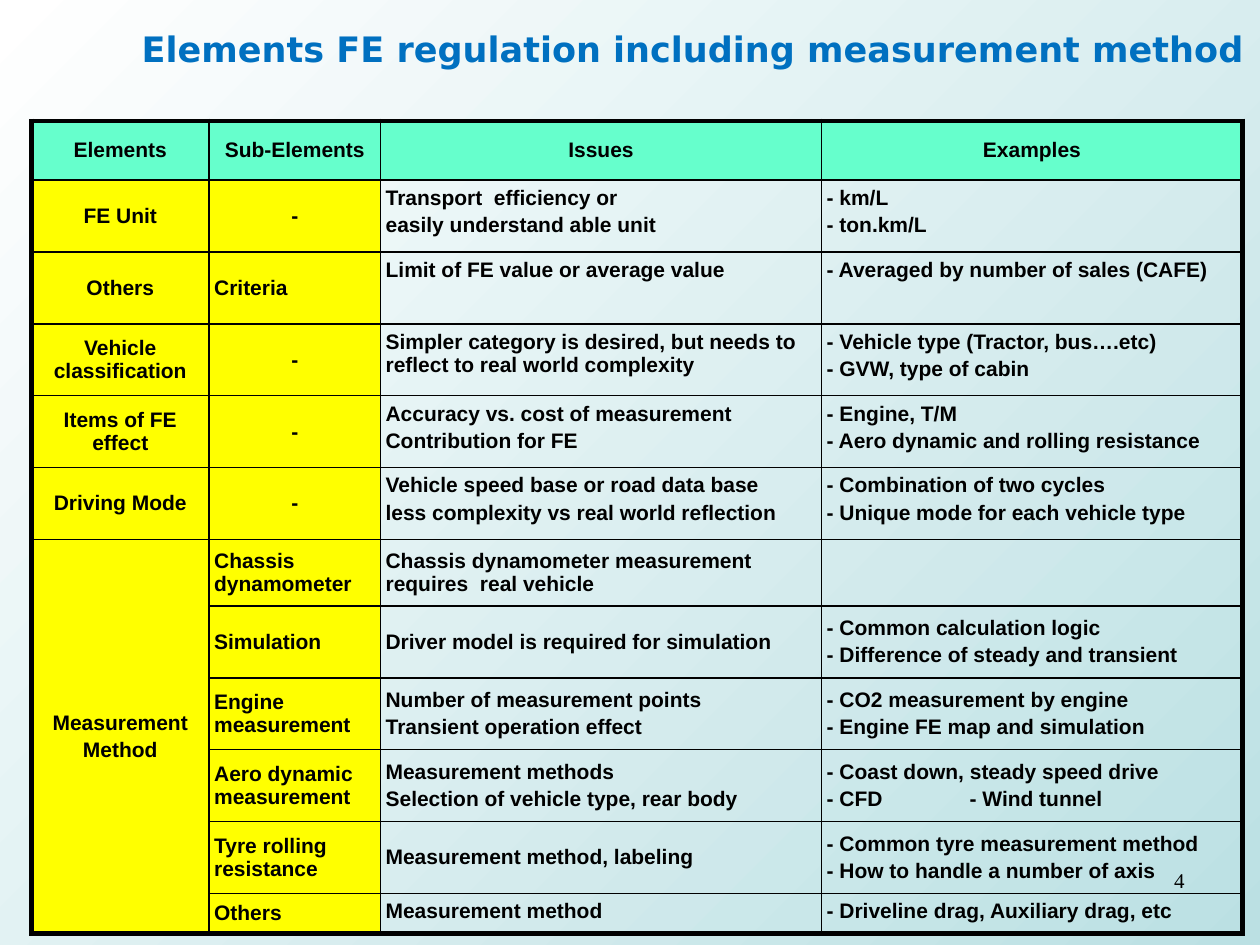
from dataclasses import dataclass

from lxml.etree import SubElement
from pptx import Presentation
from pptx.dml.color import RGBColor
from pptx.enum.text import MSO_ANCHOR, MSO_AUTO_SIZE, PP_ALIGN
from pptx.oxml.ns import qn
from pptx.table import Table, _Cell
from pptx.text.text import TextFrame
from pptx.util import Pt

BLACK = RGBColor(0x00, 0x00, 0x00)
WHITE = RGBColor(0xFF, 0xFF, 0xFF)
PALE_TEAL = RGBColor(0xBB, 0xE0, 0xE3)
TITLE_BLUE = RGBColor(0x00, 0x70, 0xC0)
MINT = RGBColor(0x66, 0xFF, 0xCC)
YELLOW = RGBColor(0xFF, 0xFF, 0x00)

THIN, THICK = 1, 3
COL_WIDTHS = (101.5, 98, 252, 240.5)


@dataclass
class Row:
    element: str
    sub: str
    issues: str
    examples: str
    height: float = 41.1
    anchor: MSO_ANCHOR = MSO_ANCHOR.TOP

    def texts(self) -> tuple[str, ...]:
        return self.element, self.sub, self.issues, self.examples


MIDDLE = MSO_ANCHOR.MIDDLE
ROWS = [
    Row("Elements", "Sub-Elements", "Issues", "Examples", 33.8, MIDDLE),
    Row("FE Unit", "-", "Transport  efficiency or\neasily understand able unit",
        "- km/L\n- ton.km/L"),
    Row("Others", "Criteria", "Limit of FE value or average value",
        "- Averaged by number of sales (CAFE)"),
    Row("Vehicle classification", "-",
        "Simpler category is desired, but needs to reflect to real world complexity",
        "- Vehicle type (Tractor, bus….etc)\n- GVW, type of cabin"),
    Row("Items of FE effect", "-",
        "Accuracy vs. cost of measurement\nContribution for FE",
        "- Engine, T/M\n- Aero dynamic and rolling resistance"),
    Row("Driving Mode", "-",
        "Vehicle speed base or road data base\nless complexity vs real world reflection",
        "- Combination of two cycles\n- Unique mode for each vehicle type"),
    Row("Measurement\nMethod", "Chassis dynamometer",
        "Chassis dynamometer measurement requires  real vehicle", "", 38, MIDDLE),
    Row("", "Simulation", "Driver model is required for simulation",
        "- Common calculation logic\n- Difference of steady and transient",
        anchor=MIDDLE),
    Row("", "Engine measurement",
        "Number of measurement points\nTransient operation effect",
        "- CO2 measurement by engine\n- Engine FE map and simulation",
        anchor=MIDDLE),
    Row("", "Aero dynamic measurement",
        "Measurement methods\nSelection of vehicle type, rear body",
        "- Coast down, steady speed drive\n- CFD\t- Wind tunnel", anchor=MIDDLE),
    Row("", "Tyre rolling resistance", "Measurement method, labeling",
        "- Common tyre measurement method\n- How to handle a number of axis",
        anchor=MIDDLE),
    Row("", "Others", "Measurement method",
        "- Driveline drag, Auxiliary drag, etc", 23),
]
METHOD_ROW = 6


def write(tf: TextFrame, text: str, *, size: float = 12, font: str = "Arial",
          color: RGBColor = BLACK, bold: bool = True,
          align: PP_ALIGN = PP_ALIGN.LEFT, gap: float = 2) -> None:
    """Write one paragraph per line of text."""
    for i, line in enumerate(text.split("\n")):
        p = tf.paragraphs[0] if i == 0 else tf.add_paragraph()
        p.alignment = align
        p.space_before = Pt(gap if i else 0)
        if "\t" in line:
            tabs = SubElement(p._p.get_or_add_pPr(), qn("a:tabLst"))
            SubElement(tabs, qn("a:tab"), pos=str(Pt(81.7)), algn="l")
        if line:
            r = p.add_run()
            r.text = line
            r.font.size, r.font.name, r.font.bold = Pt(size), font, bold
            r.font.color.rgb = color


def set_borders(cell: _Cell, **widths: float) -> None:
    tc_pr = cell._tc.get_or_add_tcPr()
    for side, width in widths.items():
        ln = SubElement(tc_pr, qn(f"a:ln{side}"), w=str(Pt(width)))
        fill = SubElement(ln, qn("a:solidFill"))
        SubElement(fill, qn("a:srgbClr"), val=str(BLACK))


def format_cell(table: Table, i: int, j: int, row: Row) -> None:
    cell = table.cell(i, j)
    text = row.texts()[j]
    cell.margin_left = cell.margin_right = Pt(2.9)
    cell.margin_top = cell.margin_bottom = Pt(3.6)
    cell.vertical_anchor = MIDDLE if j < 2 else row.anchor

    bottom = i + (cell.span_height if cell.is_merge_origin else 1)
    set_borders(cell,
                L=THICK if j == 0 else THIN,
                R=THICK if j == len(COL_WIDTHS) - 1 else THIN,
                T=THICK if i == 0 else THIN,
                B=THICK if bottom == len(ROWS) else THIN)

    if i == 0 or j < 2:
        cell.fill.solid()
        cell.fill.fore_color.rgb = MINT if i == 0 else YELLOW
    else:
        cell.fill.background()

    centred = i == 0 or j == 0 or text == "-"
    write(cell.text_frame, text,
          align=PP_ALIGN.CENTER if centred else PP_ALIGN.LEFT)


def main() -> None:
    prs = Presentation()
    prs.slide_width, prs.slide_height = Pt(720), Pt(540)
    s = prs.slides.add_slide(prs.slide_layouts[5])

    # Diagonal background gradient
    bg = s.background.fill
    bg.gradient()
    bg.gradient_angle = 315
    for stop, color, position in zip(bg.gradient_stops, (WHITE, PALE_TEAL), (0, 1)):
        stop.color.rgb = color
        stop.position = position

    # Title
    sp = s.shapes.title
    sp.left, sp.top, sp.width, sp.height = Pt(72), Pt(12.2), Pt(648), Pt(47.5)
    tf = sp.text_frame
    tf.word_wrap = True
    tf.auto_size = MSO_AUTO_SIZE.NONE
    tf.vertical_anchor = MSO_ANCHOR.TOP
    write(tf, "Elements FE regulation including measurement method", size=20,
          font="DejaVu Sans", color=TITLE_BLUE, align=PP_ALIGN.CENTER)

    # Table of regulation elements
    table = s.shapes.add_table(
        len(ROWS), len(COL_WIDTHS), Pt(18), Pt(69.1),
        Pt(sum(COL_WIDTHS)), Pt(sum(row.height for row in ROWS))).table
    table.first_row = table.horz_banding = False
    for column, width in zip(table.columns, COL_WIDTHS):
        column.width = Pt(width)
    table.cell(METHOD_ROW, 0).merge(table.cell(len(ROWS) - 1, 0))
    for i, row in enumerate(ROWS):
        table.rows[i].height = Pt(row.height)
        for j in range(len(COL_WIDTHS)):
            format_cell(table, i, j, row)

    # Page number
    tf = s.shapes.add_textbox(Pt(516), Pt(492), Pt(168), Pt(37.5)).text_frame
    tf.word_wrap = True
    write(tf, "4", font="Times New Roman", bold=False, align=PP_ALIGN.RIGHT)

    prs.save("out.pptx")


if __name__ == "__main__":
    main()
